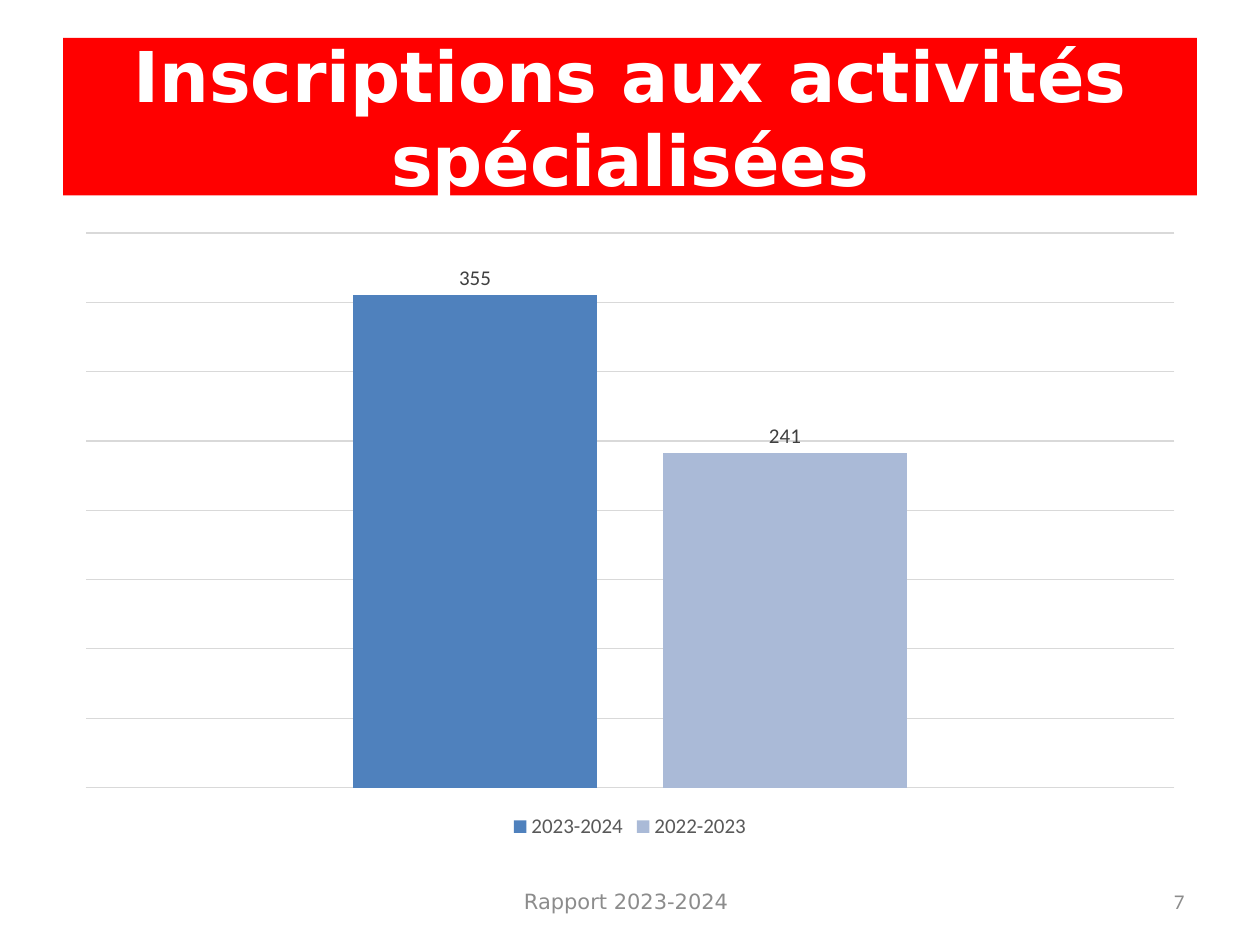
from dataclasses import dataclass
from pptx import Presentation
from pptx.chart.data import CategoryChartData
from pptx.dml.color import RGBColor
from pptx.enum.chart import (XL_CHART_TYPE, XL_LABEL_POSITION, XL_LEGEND_POSITION,
                             XL_TICK_LABEL_POSITION, XL_TICK_MARK)
from pptx.enum.text import MSO_ANCHOR, PP_ALIGN
from pptx.util import Inches, Pt

# Content
TITLE = "Inscriptions aux activités spécialisées"
YEARS = [("2023-2024", 355, "4F81BD"), ("2022-2023", 241, "AABAD7")]
FOOT = "Rapport 2023-2024"
PAGE = "7"


@dataclass(frozen=True)
class Theme:
    head: str = "DejaVu Sans"
    body: str = "Calibri"
    big: int = 40
    small: int = 12
    red: str = "FF0000"
    white: str = "FFFFFF"
    grid: str = "D9D9D9"
    label: str = "404040"
    key: str = "595959"
    foot: str = "8C8C8C"


T = Theme()

# Layout in inches: shared margin, stacked rows
WIDE, HIGH, EDGE = 10, 7.5, 0.5
SPAN = WIDE - 2 * EDGE
HEAD = (EDGE, 0.3, SPAN, 1.25)
PLOT = (EDGE, 1.75, SPAN, 4.95)
ROW, TALL = 6.95, 0.4
MID, SIDE = 3.17, 2.33
NOTES = [
    (FOOT, (WIDE - MID) / 2 - 0.03, MID, PP_ALIGN.CENTER, T.head),
    (PAGE, WIDE - EDGE - SIDE, SIDE, PP_ALIGN.RIGHT, T.body),
]


def rgb(code):
    return RGBColor.from_string(code)


def style(font, name, size, color, bold=False):
    font.name, font.size, font.bold = name, Pt(size), bold
    font.color.rgb = rgb(color)


def place(shape, box):
    shape.left, shape.top, shape.width, shape.height = map(Inches, box)


def write(shape, text, align, name, size, color, bold=False):
    frame = shape.text_frame
    frame.word_wrap = True
    frame.vertical_anchor = MSO_ANCHOR.MIDDLE
    para = frame.paragraphs[0]
    para.alignment = align
    run = para.add_run()
    run.text = text
    style(run.font, name, size, color, bold)


def rule(line):
    line.color.rgb = rgb(T.grid)
    line.width = Pt(0.75)


def add_title(slide):
    title = slide.shapes.title
    place(title, HEAD)
    title.fill.solid()
    title.fill.fore_color.rgb = rgb(T.red)
    write(title, TITLE, PP_ALIGN.CENTER, T.head, T.big, T.white, True)


def add_bars(slide):
    data = CategoryChartData()
    data.categories = ["1"]
    for name, count, _ in YEARS:
        data.add_series(name, [count])
    chart = slide.shapes.add_chart(
        XL_CHART_TYPE.COLUMN_CLUSTERED, *map(Inches, PLOT), data).chart
    chart.has_title = False
    style(chart.font, T.body, T.small, T.key)

    # Bars and their values
    plot = chart.plots[0]
    plot.gap_width, plot.overlap, plot.vary_by_categories = 219, -27, False
    for bar, (_, _, color) in zip(plot.series, YEARS):
        bar.format.fill.solid()
        bar.format.fill.fore_color.rgb = rgb(color)
        tags = bar.data_labels
        tags.show_value = True
        tags.position = XL_LABEL_POSITION.OUTSIDE_END
        style(tags.font, T.body, T.small, T.label)

    # Axes without labels, light grid
    for axis in (chart.category_axis, chart.value_axis):
        axis.tick_label_position = XL_TICK_LABEL_POSITION.NONE
        axis.major_tick_mark = axis.minor_tick_mark = XL_TICK_MARK.NONE
    rule(chart.category_axis.format.line)
    scale = chart.value_axis
    scale.minimum_scale, scale.maximum_scale, scale.major_unit = 0, 400, 50
    scale.format.line.fill.background()
    rule(scale.major_gridlines.format.line)

    # Legend
    chart.has_legend = True
    chart.legend.position = XL_LEGEND_POSITION.BOTTOM
    chart.legend.include_in_layout = False
    style(chart.legend.font, T.body, T.small, T.key)


def add_notes(slide):
    for text, left, width, align, name in NOTES:
        box = slide.shapes.add_textbox(*map(Inches, (left, ROW, width, TALL)))
        write(box, text, align, name, T.small, T.foot)


def main():
    deck = Presentation()
    deck.slide_width, deck.slide_height = Inches(WIDE), Inches(HIGH)
    slide = deck.slides.add_slide(deck.slide_layouts[5])
    add_title(slide)
    add_bars(slide)
    add_notes(slide)
    deck.save("out.pptx")


if __name__ == "__main__":
    main()
